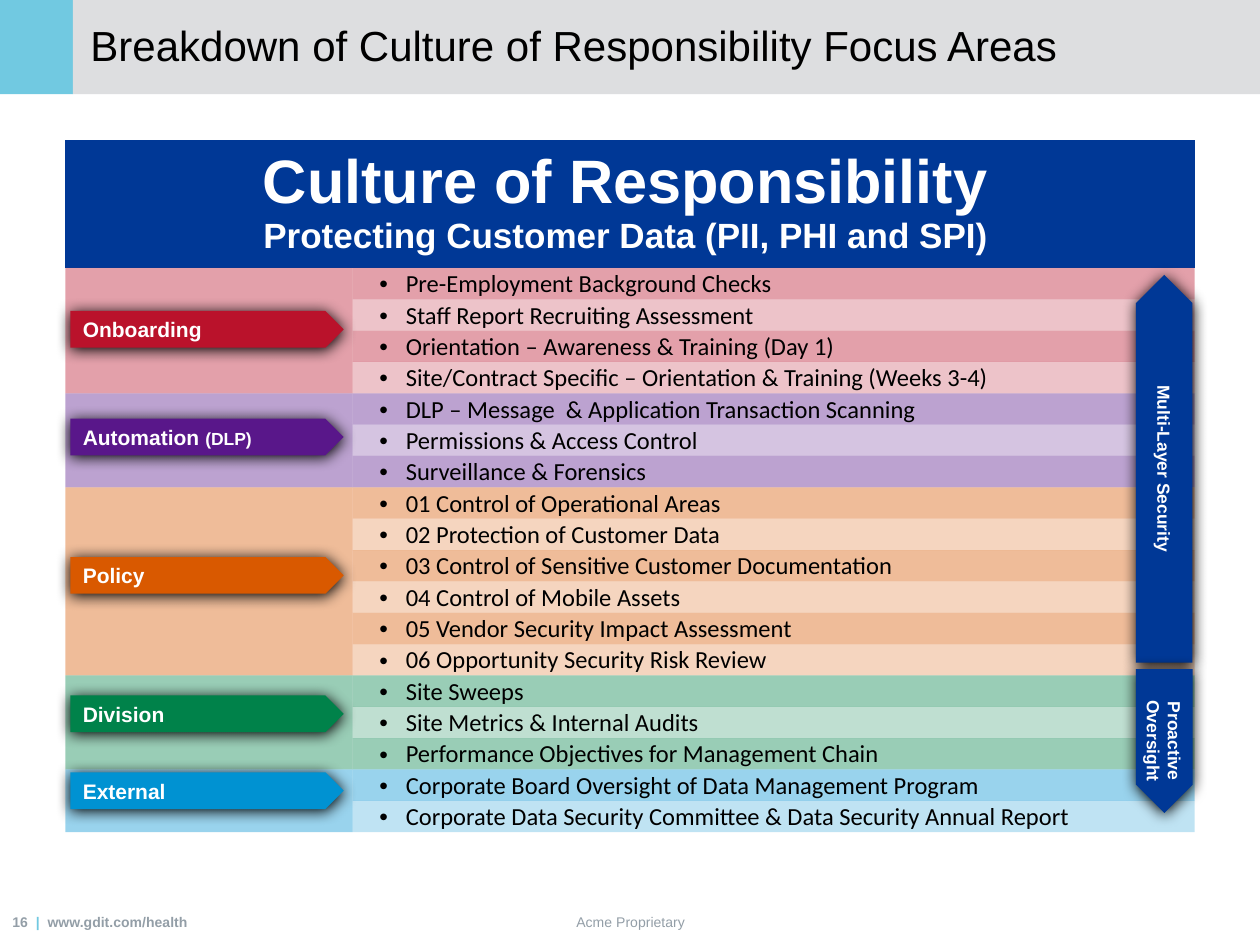
import pptx
import pptx.dml.color
import pptx.enum.shapes
import pptx.enum.text
import pptx.oxml
import pptx.oxml.ns
import pptx.util
from lxml import etree
from pptx.util import Cm

SHAPES = pptx.enum.shapes.MSO_SHAPE
ALIGN = pptx.enum.text.PP_ALIGN
MIDDLE = pptx.enum.text.MSO_ANCHOR.MIDDLE
qn = pptx.oxml.ns.qn

NAVY, WHITE, BLACK, GREY, AQUA = "003896", "FFFFFF", "000000", "939EA7", "71C9E1"
NO_STYLE = "{2D5ABB26-0587-4C30-8999-92F81FD0307C}"
HEADER_HEIGHT, ROW_HEIGHT = 2.58, 0.62
LABEL_WIDTH, ITEM_WIDTH = 5.79, 16.97

FOCUS_AREAS = [
    ("BA122B", [("Onboarding", 12)], [
        "Pre-Employment Background Checks",
        "Staff Report Recruiting Assessment",
        "Orientation – Awareness & Training (Day 1)",
        "Site/Contract Specific – Orientation & Training (Weeks 3-4)"]),
    ("59178A", [("Automation ", 12), ("(DLP)", 10)], [
        "DLP – Message  & Application Transaction Scanning",
        "Permissions & Access Control",
        "Surveillance & Forensics"]),
    ("D95900", [("Policy", 12)], [
        "01 Control of Operational Areas",
        "02 Protection of Customer Data",
        "03 Control of Sensitive Customer Documentation",
        "04 Control of Mobile Assets",
        "05 Vendor Security Impact Assessment",
        "06 Opportunity Security Risk Review"]),
    ("00824A", [("Division", 12)], [
        "Site Sweeps",
        "Site Metrics & Internal Audits",
        "Performance Objectives for Management Chain"]),
    ("0092D2", [("External", 12)], [
        "Corporate Board Oversight of Data Management Program",
        "Corporate Data Security Committee & Data Security Annual Report"]),
]


def color(value):
    """Turn a hex string into a colour."""
    return pptx.dml.color.RGBColor.from_string(value)


def add_run(paragraph, text, size, value, bold=False, font="Arial"):
    """Add one formatted run to a paragraph."""
    run = paragraph.add_run()
    run.text = text
    run.font.name, run.font.size, run.font.bold = font, pptx.util.Pt(size), bold
    run.font.color.rgb = color(value)


def add_block(shapes, kind, left, top, width, height, value):
    """Add a filled preset shape without line or shadow."""
    shape = shapes.add_shape(kind, Cm(left), Cm(top), Cm(width), Cm(height))
    shape.fill.solid()
    shape.fill.fore_color.rgb = color(value)
    shape.line.fill.background()
    shape.shadow.inherit = False
    return shape


def add_text_box(shapes, left, top, width, height, align):
    """Add a wrapping, vertically centred text box and return it."""
    box = shapes.add_textbox(Cm(left), Cm(top), Cm(width), Cm(height))
    box.text_frame.word_wrap = True
    box.text_frame.vertical_anchor = MIDDLE
    box.text_frame.paragraphs[0].alignment = align
    return box


def add_plate(shapes, left, top, width, height, value, rotation=0):
    """Add a pentagon plate with a soft dark shadow."""
    plate = add_block(shapes, SHAPES.PENTAGON, left, top, width, height, value)
    plate.rotation = rotation
    effects = plate._element.spPr.find(qn("a:effectLst"))
    shadow = etree.SubElement(effects, qn("a:outerShdw"), blurRad="107950",
                              dist="12700", dir="5400000", algn="ctr", rotWithShape="0")
    etree.SubElement(shadow, qn("a:srgbClr"), val=BLACK)


def fill_cell(cell, value, opacity=100):
    """Fill a table cell, give it tight margins and centre it vertically."""
    cell.fill.solid()
    cell.fill.fore_color.rgb = color(value)
    if opacity < 100:
        tint = cell._tc.tcPr.find(".//" + qn("a:srgbClr"))
        etree.SubElement(tint, qn("a:alpha"), val=str(opacity * 1000))
    cell.margin_left = cell.margin_right = cell.margin_top = Cm(0.03)
    cell.margin_bottom = Cm(0)
    cell.vertical_anchor = MIDDLE


def add_bullet(paragraph):
    """Give a paragraph a bullet with a hanging indent."""
    properties = paragraph._p.get_or_add_pPr()
    properties.set("marL", str(Cm(1.04)))
    properties.set("indent", str(-Cm(0.53)))
    etree.SubElement(properties, qn("a:buFont"), typeface="Arial")
    etree.SubElement(properties, qn("a:buChar"), char="•")


def add_title_band(slide, left, top, width, height):
    """Place the title placeholder over its grey and aqua band."""
    title, accent = slide.shapes.title, 1.47
    for x, extent, value in ((left, accent, AQUA), (left + accent, width - accent, "DDDEE0")):
        band = add_block(slide.shapes, SHAPES.RECTANGLE, x, top, extent, height, value)
        title._element.addprevious(band._element)
    title.left, title.top = Cm(left + 1.57), Cm(top + 0.05)
    title.width, title.height = Cm(22.4), Cm(1.7)
    title.text_frame.vertical_anchor = MIDDLE
    paragraph = title.text_frame.paragraphs[0]
    paragraph.alignment = ALIGN.LEFT
    add_run(paragraph, "Breakdown of Culture of Responsibility Focus Areas", 24, BLACK)


def add_focus_table(slide, left, top):
    """Build the table of focus areas with a merged heading and merged label cells."""
    row_count = 1 + sum(len(items) for _, _, items in FOCUS_AREAS)
    height = HEADER_HEIGHT + ROW_HEIGHT * (row_count - 1)
    table = slide.shapes.add_table(row_count, 2, Cm(left), Cm(top),
                                   Cm(LABEL_WIDTH + ITEM_WIDTH), Cm(height)).table
    table.first_row = table.horz_banding = False
    table._tbl.tblPr.find(qn("a:tableStyleId")).text = NO_STYLE
    table.columns[0].width, table.columns[1].width = Cm(LABEL_WIDTH), Cm(ITEM_WIDTH)
    for index, row in enumerate(table.rows):
        row.height = Cm(ROW_HEIGHT if index else HEADER_HEIGHT)

    heading = table.cell(0, 0)
    heading.merge(table.cell(0, 1))
    fill_cell(heading, NAVY)
    heading.margin_right, heading.margin_bottom = Cm(0.2), Cm(0.1)
    first = heading.text_frame.paragraphs[0]
    second = heading.text_frame.add_paragraph()
    first.alignment = second.alignment = ALIGN.CENTER
    add_run(first, "Culture of Responsibility", 35, WHITE, True)
    add_run(second, "Protecting Customer Data (PII, PHI and SPI)", 20, WHITE, True)

    start = 1
    for value, _, items in FOCUS_AREAS:
        table.cell(start, 0).merge(table.cell(start + len(items) - 1, 0))
        fill_cell(table.cell(start, 0), value, 40)
        for index, item in enumerate(items):
            cell = table.cell(start + index, 1)
            fill_cell(cell, value, 25 if index % 2 else 40)
            paragraph = cell.text_frame.paragraphs[0]
            add_bullet(paragraph)
            add_run(paragraph, item, 14, BLACK, font="Calibri")
        start += len(items)


def add_area_labels(slide, left, top):
    """Centre one label plate on the rows of each focus area."""
    plate_height, text_height = 0.74, 0.76
    for value, runs, items in FOCUS_AREAS:
        span = len(items) * ROW_HEIGHT
        middle = top + span / 2
        shapes = slide.shapes.add_group_shape().shapes
        add_plate(shapes, left, middle - plate_height / 2, 5.51, plate_height, value)
        box = add_text_box(shapes, left, middle - text_height / 2, 4.9, text_height, ALIGN.LEFT)
        for text, size in runs:
            add_run(box.text_frame.paragraphs[0], text, size, WHITE, True)
        top += span


def add_side_arrows(slide, left, top, width):
    """Stack the upward and downward plates with their turned captions."""
    shapes = slide.shapes.add_group_shape().shapes
    center = left + width / 2
    arrows = [(0, 7.82, 270, 4.75, 0.69, ["Multi-Layer Security"]),
              (7.95, 2.9, 90, 2.44, 1.12, ["Proactive", "Oversight"])]
    for offset, length, rotation, text_width, text_height, lines in arrows:
        middle = top + offset + length / 2
        add_plate(shapes, center - length / 2, middle - width / 2, length, width, NAVY, rotation)
        box = add_text_box(shapes, center - text_width / 2, middle - text_height / 2,
                           text_width, text_height, ALIGN.CENTER)
        box.rotation = 90
        paragraph = box.text_frame.paragraphs[0]
        for index, line in enumerate(lines):
            if index:
                paragraph.add_line_break()
            add_run(paragraph, line, 10, WHITE, True)


def add_footer(slide, left, top, height):
    """Add the page mark on the left and the notice in the middle."""
    page = add_text_box(slide.shapes, left, top, 5.92, height, ALIGN.LEFT)
    for text, value in (("16  ", GREY), ("|  ", AQUA), ("www.gdit.com/health", GREY)):
        add_run(page.text_frame.paragraphs[0], text, 8, value, True)
    notice = add_text_box(slide.shapes, left + 8.69, top, 8.05, height, ALIGN.CENTER)
    add_run(notice.text_frame.paragraphs[0], "Acme Proprietary", 8, GREY)


def main():
    """Build the slide and save it."""
    presentation = pptx.Presentation()
    presentation.slide_width, presentation.slide_height = Cm(25.4), Cm(19.05)
    slide = presentation.slides.add_slide(presentation.slide_layouts[5])
    add_title_band(slide, 0, 0, 25.4, 1.9)
    add_focus_table(slide, 1.32, 2.82)
    add_area_labels(slide, 1.42, 2.82 + HEADER_HEIGHT)
    add_side_arrows(slide, 22.9, 5.54, 1.14)
    add_footer(slide, 0, 18.08, 1.02)
    presentation.save("out.pptx")


if __name__ == "__main__":
    main()
